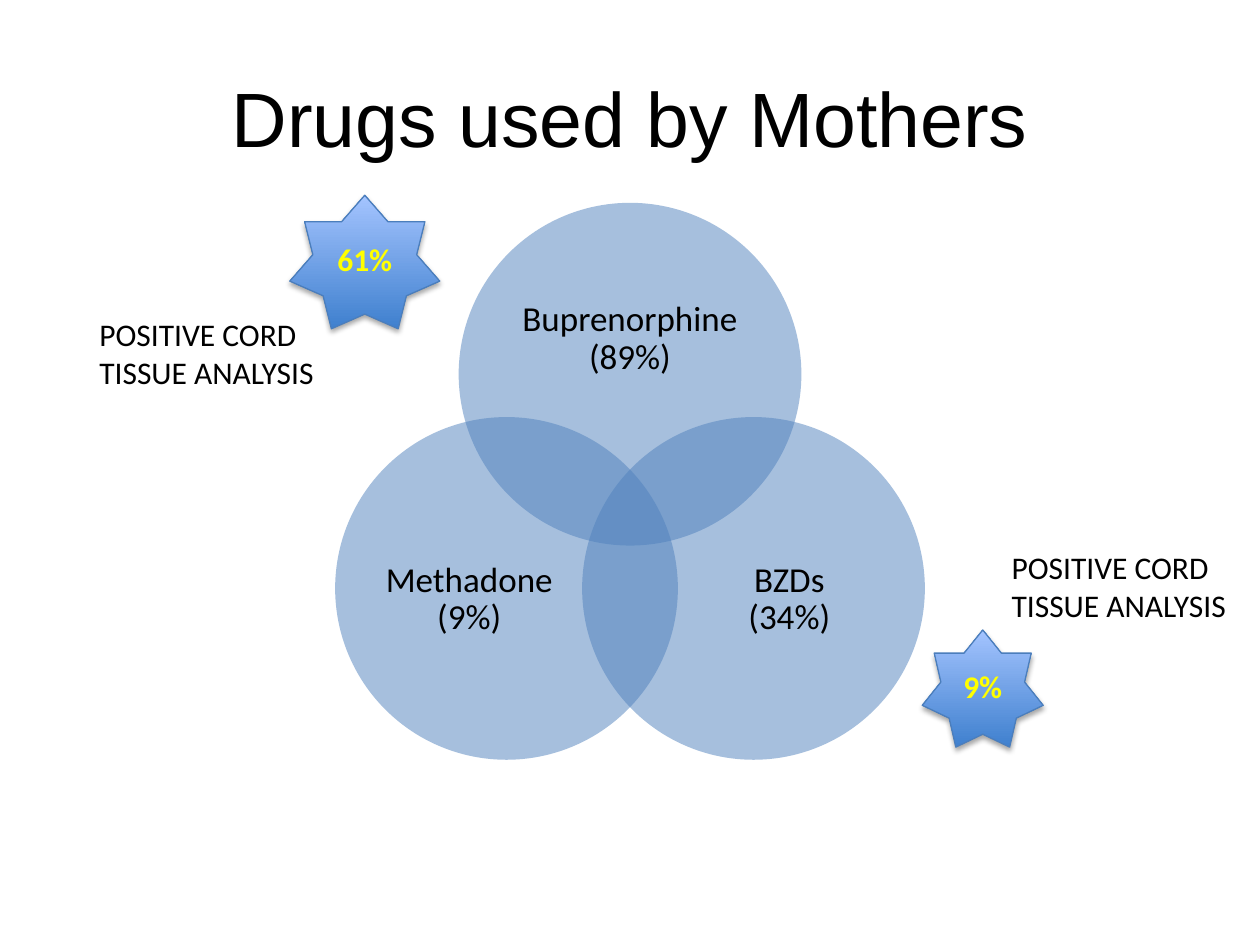
from lxml import etree
from pptx import Presentation
from pptx.dml.color import RGBColor
from pptx.enum.shapes import MSO_SHAPE
from pptx.enum.text import MSO_ANCHOR, PP_ALIGN
from pptx.oxml.ns import qn
from pptx.util import Inches, Pt

OVAL, STAR = MSO_SHAPE.OVAL, MSO_SHAPE.STAR_7_POINT
LEFT, CENTER = PP_ALIGN.LEFT, PP_ALIGN.CENTER
MIDDLE = MSO_ANCHOR.MIDDLE
TITLE_ONLY = 5
COLUMNS, ROWS = 10, 7.5  # one grid cell is one inch
COLORS = {
    "text": "000000", "circle": "4F81BD", "percent": "FFFF00", "shadow": "000000",
    "star_bottom": "3F80CE", "star_top": "A4C4FF", "star_line": "4B7EBC",
}
DIAMETER = 2.72


def color(name):
    return RGBColor.from_string(COLORS[name])


class VennSlide:
    def __init__(self, deck):
        self.width, self.height = deck.slide_width, deck.slide_height
        self.page = deck.slides.add_slide(deck.slide_layouts[TITLE_ONLY])

    def place(self, column, row, columns, rows):
        """Turn grid units into slide lengths."""
        across, down = self.width / COLUMNS, self.height / ROWS
        return [int(n) for n in (column * across, row * down, columns * across, rows * down)]

    def fill_text(self, frame, lines, size, font="Calibri", ink="text", align=CENTER, bold=False):
        frame.text = "\n".join(lines)
        for para in frame.paragraphs:
            para.alignment = align
            para.font.name, para.font.size, para.font.bold = font, Pt(size), bold
            para.font.color.rgb = color(ink)

    def title(self, text, *cells):
        box = self.page.shapes.title
        box.left, box.top, box.width, box.height = self.place(*cells)
        box.text_frame.vertical_anchor = MIDDLE
        self.fill_text(box.text_frame, [text], 44, font="Arial")

    def circle(self, column, row):
        shape = self.page.shapes.add_shape(OVAL, *self.place(column, row, DIAMETER, DIAMETER))
        shape.shadow.inherit = False
        shape.fill.solid()
        shape.fill.fore_color.rgb = color("circle")
        tint = shape._element.spPr.find(".//" + qn("a:srgbClr"))
        etree.SubElement(tint, qn("a:alpha"), val="50000")
        shape.line.fill.background()

    def circle_label(self, text, *cells):
        frame = self.page.shapes.add_textbox(*self.place(*cells)).text_frame
        frame.word_wrap, frame.vertical_anchor = True, MIDDLE
        frame.margin_left = frame.margin_right = frame.margin_top = frame.margin_bottom = 0
        self.fill_text(frame, [text], 20)
        frame.paragraphs[0].line_spacing = 0.9

    def star(self, text, *cells):
        shape = self.page.shapes.add_shape(STAR, *self.place(*cells))
        shape.fill.gradient()
        shape.fill.gradient_angle = 90
        for stop, name in zip(shape.fill.gradient_stops, ("star_bottom", "star_top")):
            stop.color.rgb = color(name)
        shape.line.color.rgb, shape.line.width = color("star_line"), Pt(0.75)
        self.drop_shadow(shape)
        shape.text_frame.vertical_anchor = MIDDLE
        self.fill_text(shape.text_frame, [text], 18, ink="percent", bold=True)

    def drop_shadow(self, shape):
        shape.shadow.inherit = False
        effects = shape._element.spPr.find(qn("a:effectLst"))
        shadow = etree.SubElement(
            effects, qn("a:outerShdw"), blurRad=str(int(Pt(3.1))), dist=str(int(Pt(1.8))),
            dir="5400000", rotWithShape="0")
        tint = etree.SubElement(shadow, qn("a:srgbClr"), val=COLORS["shadow"])
        etree.SubElement(tint, qn("a:alpha"), val="35000")

    def caption(self, lines, *cells):
        frame = self.page.shapes.add_textbox(*self.place(*cells)).text_frame
        frame.word_wrap = False
        self.fill_text(frame, lines, 18, align=LEFT)


def main():
    deck = Presentation()
    deck.slide_width, deck.slide_height = Inches(COLUMNS), Inches(ROWS)
    slide = VennSlide(deck)
    slide.title("Drugs used by Mothers", 0.5, 0.3, 9, 1.25)

    drugs = [
        ((3.64, 1.61), "Buprenorphine (89%)", (4, 2.08, 2, 1.22)),
        ((4.62, 3.31), "BZDs\v(34%)", (5.45, 4.01, 1.63, 1.5)),
        ((2.66, 3.31), "Methadone (9%)", (2.91, 4.01, 1.63, 1.5)),
    ]
    for corner, label, label_cells in drugs:
        slide.circle(*corner)
        slide.circle_label(label, *label_cells)

    slide.star("9%", 7.32, 5, 0.96, 0.93)
    slide.star("61%", 2.3, 1.55, 1.19, 1.06)
    for column, row in ((0.69, 2.45), (7.93, 4.3)):
        slide.caption(["POSITIVE CORD", "TISSUE ANALYSIS"], column, row, 1.92, 0.71)
    deck.save("out.pptx")


if __name__ == "__main__":
    main()
